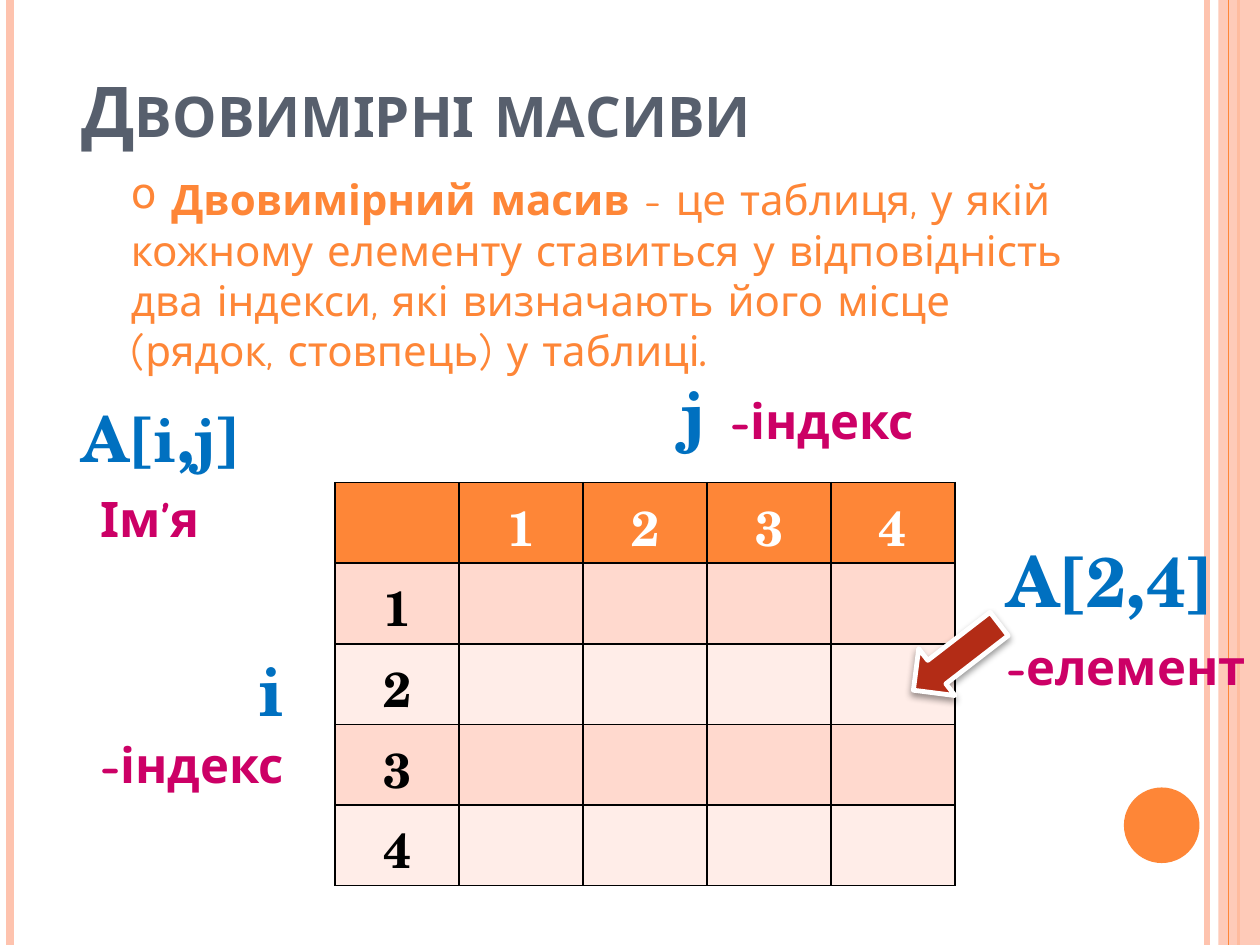
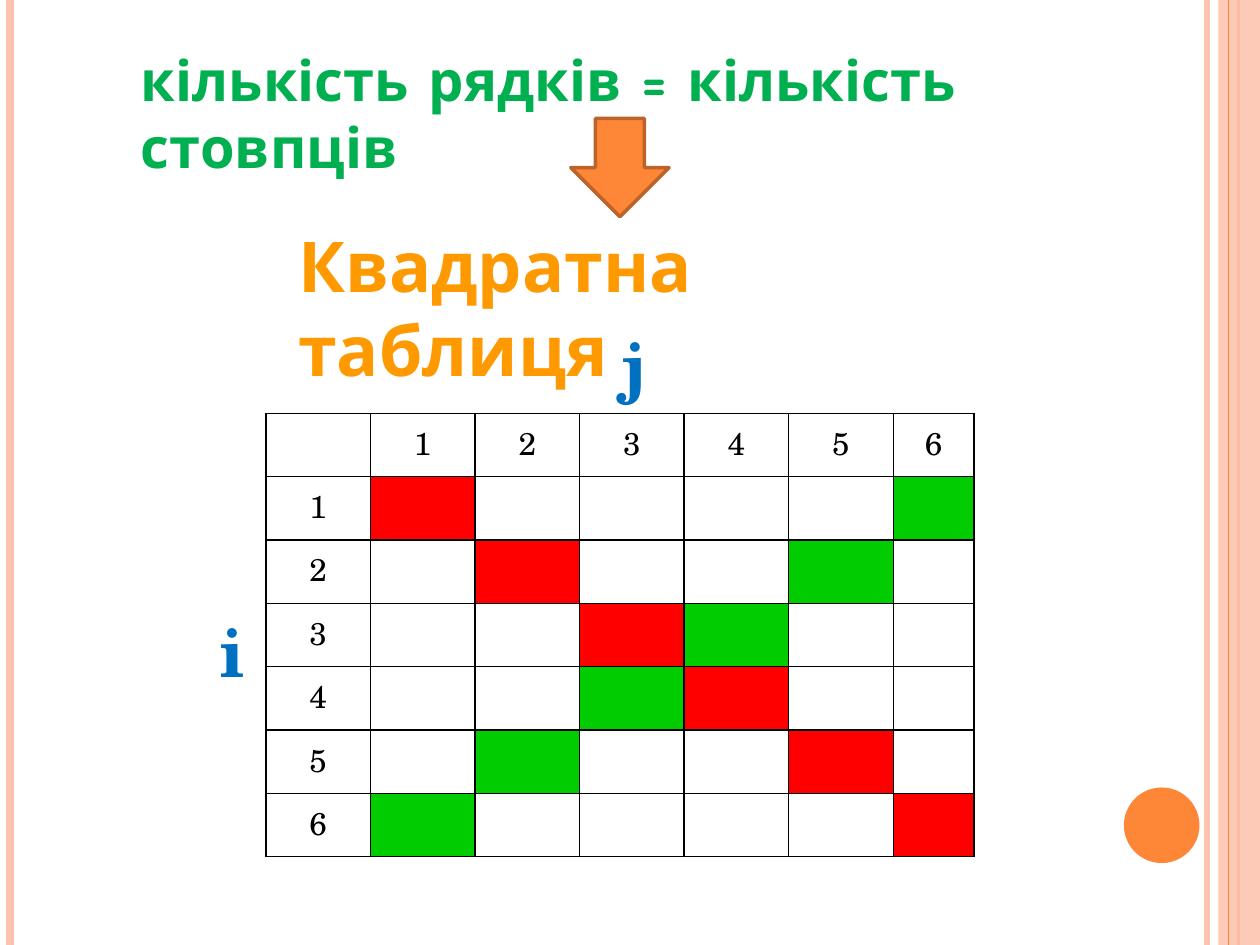
from dataclasses import dataclass
from typing import Callable

from lxml import etree
from pptx import Presentation
from pptx.dml.color import RGBColor
from pptx.enum.shapes import MSO_CONNECTOR, MSO_SHAPE
from pptx.enum.text import MSO_ANCHOR, MSO_AUTO_SIZE, PP_ALIGN
from pptx.oxml.ns import qn
from pptx.util import Inches, Pt

SLIDE_WIDTH, SLIDE_HEIGHT = Inches(10), Inches(7.5)
COLUMNS, ROWS = 100, 75
STRAIGHT = MSO_CONNECTOR.STRAIGHT
RECTANGLE, ELLIPSE = MSO_SHAPE.RECTANGLE, MSO_SHAPE.OVAL
LEFT_ARROW, DOWN_ARROW = MSO_SHAPE.LEFT_ARROW, MSO_SHAPE.DOWN_ARROW
TOP, BOTTOM = MSO_ANCHOR.TOP, MSO_ANCHOR.BOTTOM
FIT_TEXT, CENTER = MSO_AUTO_SIZE.SHAPE_TO_FIT_TEXT, PP_ALIGN.CENTER
SANS, SERIF = "Comic Neue", "TeX Gyre Schola"

COLORS = {
    "orange": "FE8637", "peach": "FEC3AE", "slate": "575F6D",
    "blue": "0070C0", "magenta": "CC0066", "black": "000000",
    "white": "FFFFFF", "band dark": "FFD9CE", "band light": "FFEDE8",
    "brick": "B32C16", "rust": "BC6329", "leaf": "00B050",
    "amber": "FF9900", "red": "FF0000", "green": "00CC00",
}


@dataclass(frozen=True)
class Place:
    """A box measured in grid columns and rows."""
    column: float
    row: float
    width: float
    height: float

    def emu(self) -> tuple[int, int, int, int]:
        """Return the box as left, top, width and height in EMU."""
        return across(self.column), down(self.row), across(self.width), down(self.height)


@dataclass(frozen=True)
class Stripe:
    """A full-height vertical line at the slide's edge."""
    column: float
    color: str
    weight: float


@dataclass(frozen=True)
class Label:
    """A short bold caption in one format."""
    text: str
    place: Place
    color: str = "blue"
    size: float = 40
    font: str = SERIF


@dataclass(frozen=True)
class Figure:
    """A preset shape with its fill, outline and turn."""
    preset: int
    place: Place
    fill: str
    outline: str = ""
    weight: float = 0
    rotation: float = 0


@dataclass(frozen=True)
class IndexGrid:
    """A table whose first row and column hold the index numbers."""
    place: Place
    column_widths: tuple[float, ...]
    size: float
    bold: bool
    fill_of: Callable[[int, int], str]
    header_color: str


STRIPES = (
    Stripe(95.8, "peach", 3), Stripe(0.8, "peach", 4.5), Stripe(98.3, "orange", 1.5),
    Stripe(97.5, "orange", 0.75),
)
EDGE_BAND = Figure(RECTANGLE, Place(96.7, 0, 3.3, ROWS), "peach")
PAGE_DOT = Figure(ELLIPSE, Place(89.2, 62.5, 6, 6), "orange")


def index_caption(text: str, column: float, row: float, width: float = 18.8) -> Label:
    """Return a magenta caption explaining a part of the array notation."""
    return Label(text, Place(column, row, width, 5.7), "magenta", 28, SANS)


def index_letter(text: str, column: float, row: float) -> Label:
    """Return a large blue index letter."""
    return Label(text, Place(column, row, 10.9, 7.7))


def banded_fill(row: int, column: int) -> str:
    """Return the header colour or the alternating band of a row."""
    if row == 0:
        return "orange"
    return "band dark" if row % 2 else "band light"


def diagonal_fill(row: int, column: int) -> str:
    """Mark the main diagonal red and the secondary one green."""
    if row == 0 or column == 0:
        return ""
    if row == column:
        return "red"
    return "green" if row + column == 7 else ""


ARRAY_LABELS = (
    index_letter("j", 53.1, 28.9),
    index_letter("i", 19.5, 50.8),
    Label("A[i,j]", Place(5.5, 31.2, 18, 7.1), size=36),
    index_caption("Ім’я", 7, 38.3),
    index_caption("-індекс", 57, 30.5),
    index_caption("-індекс", 7, 57.8),
    Label("A[2,4]", Place(78.9, 42.2, 21.1, 7.7)),
    index_caption("-елемент", 78.9, 50, 23.4),
)
ARRAY_GRID = IndexGrid(Place(26.6, 38.3, 49.2, 32), (9.84,) * 5, 28, True, banded_fill, "white")
ELEMENT_ARROW = Figure(LEFT_ARROW, Place(71.6, 49.8, 8.6, 4.7), "brick", "white", 2.75, 322.3)

SQUARE_LABELS = (
    Label("кількість рядків = кількість стовпців", Place(10.2, 3.1, 85.9, 13.1),
          "leaf", 32, SANS),
    Label("Квадратна таблиця", Place(22.7, 17.2, 54.5, 7.7), "amber", 40, SANS),
)
SQUARE_LETTERS = (index_letter("j", 48.4, 25), index_letter("i", 16.4, 47.7))
SQUARE_GRID = IndexGrid(Place(21.1, 32.8, 56.2, 35.2), (8.3,) * 6 + (6.4,), 18, False,
                        diagonal_fill, "black")
RESULT_ARROW = Figure(DOWN_ARROW, Place(45.3, 9.4, 7.8, 7.8), "orange", "rust", 2)


def across(columns: float) -> int:
    """Convert grid columns to EMU."""
    return round(SLIDE_WIDTH * columns / COLUMNS)


def down(rows: float) -> int:
    """Convert grid rows to EMU."""
    return round(SLIDE_HEIGHT * rows / ROWS)


def rgb(color: str) -> RGBColor:
    """Look up a palette colour."""
    return RGBColor.from_string(COLORS[color])


def add_child(parent, tag: str, **attributes):
    """Append a drawing element with its attributes."""
    return etree.SubElement(parent, qn(tag), attributes)


def set_alpha(element, percent: int) -> None:
    """Make the first colour inside an element partly transparent."""
    add_child(next(element.iter(qn("a:srgbClr"))), "a:alpha", val=str(percent * 1000))


def write(paragraph, text: str, *, font: str = SANS, size: float = 24,
          color: str = "black", bold: bool = False, small_caps: bool = False) -> None:
    """Append formatted text to a paragraph."""
    run = paragraph.add_run()
    run.text = text
    run.font.name, run.font.size, run.font.bold = font, Pt(size), bold
    run.font.color.rgb = rgb(color)
    if small_caps:
        run._r.get_or_add_rPr().set("cap", "small")


def add_paragraph_box(slide, place: Place, anchor=TOP):
    """Add a wrapping text box and return its first paragraph."""
    frame = slide.shapes.add_textbox(*place.emu()).text_frame
    frame.word_wrap = True
    frame.vertical_anchor = anchor
    if anchor == TOP:
        frame.auto_size = FIT_TEXT
    return frame.paragraphs[0]


def draw_labels(slide, labels: tuple[Label, ...]) -> None:
    """Draw a set of bold captions."""
    for label in labels:
        write(add_paragraph_box(slide, label.place), label.text, font=label.font,
              size=label.size, color=label.color, bold=True)


def draw_stripe(slide, stripe: Stripe):
    """Draw one full-height edge line."""
    x = across(stripe.column)
    line = slide.shapes.add_connector(STRAIGHT, x, 0, x, SLIDE_HEIGHT)
    line.line.color.rgb = rgb(stripe.color)
    line.line.width = Pt(stripe.weight)
    add_child(line._element.spPr, "a:effectLst")
    return line


def draw_figure(slide, figure: Figure):
    """Draw a preset shape without a theme shadow."""
    shape = slide.shapes.add_shape(figure.preset, *figure.place.emu())
    shape.shadow.inherit = False
    shape.rotation = figure.rotation
    shape.fill.solid()
    shape.fill.fore_color.rgb = rgb(figure.fill)
    if figure.outline:
        shape.line.color.rgb = rgb(figure.outline)
        shape.line.width = Pt(figure.weight)
    else:
        shape.line.fill.background()
    return shape


def cast_shadow(shape) -> None:
    """Give a shape a soft shadow straight below it."""
    effects = shape._element.spPr.find(qn("a:effectLst"))
    shadow = add_child(effects, "a:outerShdw", blurRad=str(Pt(4)), dist=str(Pt(2)),
                       dir="5400000", rotWithShape="0")
    add_child(shadow, "a:srgbClr", val=COLORS["black"])
    set_alpha(shadow, 40)


def outline_cell(cell) -> None:
    """Draw a thin black border on all sides of a cell."""
    properties = cell._tc.get_or_add_tcPr()
    for side in "LRTB":
        border = add_child(properties, f"a:ln{side}", w=str(Pt(1)))
        fill = add_child(border, "a:solidFill")
        add_child(fill, "a:srgbClr", val=COLORS["black"])


def draw_index_grid(slide, grid: IndexGrid) -> None:
    """Draw a square table with numbered rows and columns."""
    count = len(grid.column_widths)
    table = slide.shapes.add_table(count, count, *grid.place.emu()).table
    table.first_row = table.horz_banding = False
    for index, width in enumerate(grid.column_widths):
        table.columns[index].width = across(width)
        table.rows[index].height = down(grid.place.height / count)
        for column in range(count):
            cell = table.cell(index, column)
            outline_cell(cell)
            color = grid.fill_of(index, column)
            if color:
                cell.fill.solid()
                cell.fill.fore_color.rgb = rgb(color)
            else:
                cell.fill.background()
            if (index == 0) != (column == 0):
                paragraph = cell.text_frame.paragraphs[0]
                paragraph.alignment = CENTER
                write(paragraph, str(index + column), font=SERIF, size=grid.size,
                      color="black" if index else grid.header_color, bold=grid.bold)


def new_slide(deck):
    """Add a blank slide with the shared edge decoration."""
    slide = deck.slides.add_slide(deck.slide_layouts[6])
    for stripe in STRIPES[:3]:
        draw_stripe(slide, stripe)
    set_alpha(draw_figure(slide, EDGE_BAND)._element.spPr, 87)
    draw_stripe(slide, STRIPES[3])
    draw_figure(slide, PAGE_DOT)
    return slide


def build_array_slide(deck) -> None:
    """Define the two-dimensional array and its notation."""
    slide = new_slide(deck)
    title = add_paragraph_box(slide, Place(5.5, 0, 81.7, 12.5), BOTTOM)
    write(title, "Двовимірні масиви", size=40, color="slate", bold=True, small_caps=True)
    definition = add_paragraph_box(slide, Place(9.4, 13.3, 78.1, 17.2))
    add_child(definition._p.get_or_add_pPr(), "a:buChar", char="o")
    write(definition, " Двовимірний масив ", color="orange", bold=True)
    write(definition, "- це таблиця, у якій кожному елементу ставиться у відповідність "
          "два індекси, які визначають його місце (рядок, стовпець) у таблиці", color="orange")
    write(definition, ".", color="orange", bold=True)
    draw_index_grid(slide, ARRAY_GRID)
    draw_labels(slide, ARRAY_LABELS)
    cast_shadow(draw_figure(slide, ELEMENT_ARROW))


def build_square_slide(deck) -> None:
    """Show a square table with both diagonals marked."""
    slide = new_slide(deck)
    draw_labels(slide, SQUARE_LABELS)
    draw_figure(slide, RESULT_ARROW)
    draw_index_grid(slide, SQUARE_GRID)
    draw_labels(slide, SQUARE_LETTERS)


def main() -> None:
    """Build and save the presentation."""
    deck = Presentation()
    deck.slide_width, deck.slide_height = SLIDE_WIDTH, SLIDE_HEIGHT
    build_array_slide(deck)
    build_square_slide(deck)
    deck.save("out.pptx")


if __name__ == "__main__":
    main()
